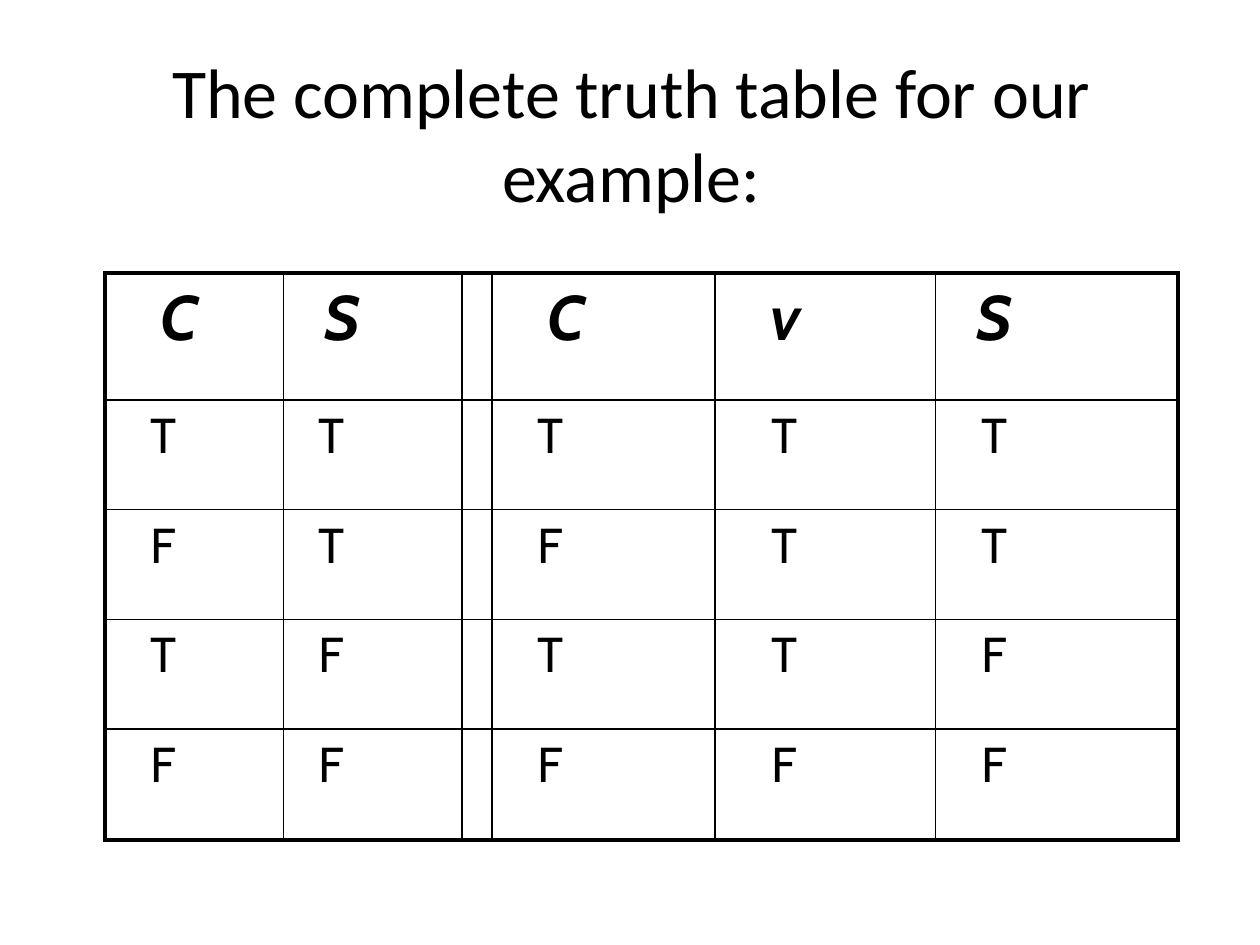
from lxml.etree import SubElement
from pptx import Presentation
from pptx.dml.color import RGBColor
from pptx.enum.text import MSO_ANCHOR, MSO_AUTO_SIZE, PP_ALIGN
from pptx.oxml.ns import qn
from pptx.util import Pt

COLORS = {"ink": "000000"}
INSET = 7.2
SPACE_WIDTH = 0.225  # width of one indent step, in ems
THIN, THICK = 1, 2.25

COL_WIDTHS = [102, 102, 17, 127.5, 126, 138.5]
ROW_HEIGHTS = [72.5, 62.75, 62.75, 62.75, 63.25]
HEADER = ["C", "S", "", "C", "v", "S"]
VALUES = ["TT TTT", "FT FTT", "TF TTF", "FF FFF"]
HEADER_STEPS = [3, 2, 0, 3, 3, 2]
BODY_STEPS = [3, 2, 0, 3, 4, 3]


def add_text(tf, text, size, font, bold=False, italic=False,
             align=PP_ALIGN.LEFT, before=0):
    p = tf.paragraphs[0]
    p.alignment = align
    p.space_before = Pt(before)
    r = p.add_run()
    r.text = text
    r.font.size, r.font.name = Pt(size), font
    r.font.bold, r.font.italic = bold, italic
    r.font.color.rgb = RGBColor.from_string(COLORS["ink"])


def set_borders(cell, widths):
    """Draw the left, right, top and bottom borders of a cell."""
    tc_pr = cell._tc.get_or_add_tcPr()
    for i, (side, width) in enumerate(zip("LRTB", widths)):
        ln = SubElement(tc_pr, qn(f"a:ln{side}"), w=str(Pt(width)))
        fill = SubElement(ln, qn("a:solidFill"))
        SubElement(fill, qn("a:srgbClr"), val=COLORS["ink"])
        tc_pr.insert(i, ln)


def add_title(s, text):
    sp = s.shapes.title
    sp.left, sp.top, sp.width, sp.height = Pt(54), Pt(18), Pt(613.5), Pt(115)
    tf = sp.text_frame
    tf.word_wrap = True
    tf.auto_size = MSO_AUTO_SIZE.NONE
    tf.vertical_anchor = MSO_ANCHOR.MIDDLE
    add_text(tf, text, 40, "Calibri", align=PP_ALIGN.CENTER)


def add_truth_table(s):
    rows = [HEADER] + VALUES
    last_row, last_col = len(rows) - 1, len(HEADER) - 1
    table = s.shapes.add_table(len(rows), len(HEADER), Pt(60), Pt(156),
                               Pt(sum(COL_WIDTHS)), Pt(sum(ROW_HEIGHTS))).table
    table.first_row = table.horz_banding = False
    for col, width in zip(table.columns, COL_WIDTHS):
        col.width = Pt(width)
    for row, height in zip(table.rows, ROW_HEIGHTS):
        row.height = Pt(height)

    for i, row in enumerate(rows):
        header = i == 0
        size = 36 if header else 28
        steps = HEADER_STEPS if header else BODY_STEPS
        for j, value in enumerate(row):
            cell = table.cell(i, j)
            cell.fill.background()
            # Thick lines on the outer frame only
            edges = (j == 0, j == last_col, header, i == last_row)
            set_borders(cell, [THICK if edge else THIN for edge in edges])
            if value.strip():
                cell.margin_left = Pt(round(INSET + steps[j] * size * SPACE_WIDTH, 2))
                add_text(cell.text_frame, value, size, "Cabin", bold=header,
                         italic=header, before=size * 0.2)


def main():
    prs = Presentation()
    prs.slide_width, prs.slide_height = Pt(720), Pt(540)
    s = prs.slides.add_slide(prs.slide_layouts[5])  # title only
    add_title(s, "The complete truth table for our example:")
    add_truth_table(s)
    prs.save("out.pptx")


if __name__ == "__main__":
    main()
